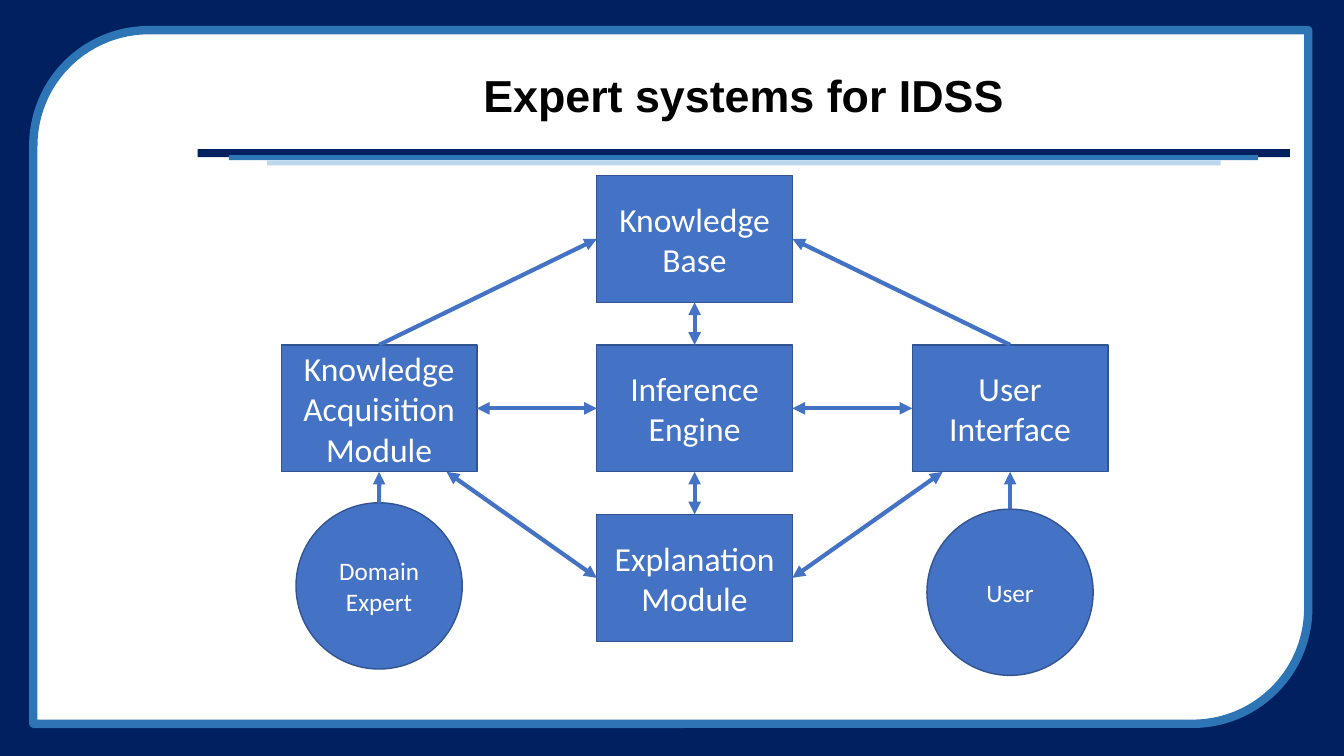
from lxml.etree import SubElement
from pptx import Presentation
from pptx.dml.color import RGBColor
from pptx.enum.shapes import MSO_CONNECTOR, MSO_SHAPE
from pptx.enum.text import MSO_ANCHOR, PP_ALIGN
from pptx.oxml.ns import qn
from pptx.util import Cm, Pt

TITLE = "Expert systems for IDSS"
NAVY, BLUE, PALE, WHITE, BLACK = "002060", "2E75B6", "BDD7EE", "FFFFFF", "000000"
NODE_FILL, NODE_LINE = "4472C4", "325491"
TOP, LEFT, BOTTOM, RIGHT = range(4)

RULES = [
    (4.98, 3.76, 27.53, 0.2, NAVY),
    (5.77, 3.91, 25.93, 0.13, BLUE),
    (6.73, 4.04, 24.03, 0.13, PALE),
]
MODULES = {
    "inference": ("Inference\nEngine", 1, 1),
    "interface": ("User\nInterface", 2, 1),
    "acquisition": ("Knowledge\nAcquisition\nModule", 0, 1),
    "explanation": ("Explanation\nModule", 1, 2),
    "knowledge": ("Knowledge\nBase", 1, 0),
}
PEOPLE = {
    "expert": ("Domain\nExpert", 0, 12.67),
    "user": ("User", 2, 12.83),
}
LINKS = [
    ("knowledge", BOTTOM, "inference", TOP, True),
    ("inference", RIGHT, "interface", LEFT, True),
    ("acquisition", RIGHT, "inference", LEFT, True),
    ("inference", BOTTOM, "explanation", TOP, True),
    ("acquisition", TOP, "knowledge", LEFT, False),
    ("interface", TOP, "knowledge", RIGHT, False),
    ("expert", TOP, "acquisition", BOTTOM, False),
    ("user", TOP, "interface", BOTTOM, False),
]
EXPLANATION_LINKS = [("acquisition", 1.7, LEFT), ("interface", -1.7, RIGHT)]

GRID_LEFT, GRID_TOP = 7.09, 4.42
COLUMN_STEP, ROW_STEP = 7.95, 4.27
BOX_WIDTH, BOX_HEIGHT, CIRCLE = 4.93, 3.2, 4.19


def color(value):
    return RGBColor.from_string(value)


def add_block(slide, kind, left, top, width, height, fill, line=None, weight=1):
    shape = slide.shapes.add_shape(kind, Cm(left), Cm(top), Cm(width), Cm(height))
    shape.shadow.inherit = False
    shape.fill.solid()
    shape.fill.fore_color.rgb = color(fill)
    if line:
        shape.line.color.rgb = color(line)
        shape.line.width = Pt(weight)
    else:
        shape.line.fill.background()
    return shape


def write(shape, text, size, font_name, font_color, bold=False):
    frame = shape.text_frame
    frame.text = text
    frame.word_wrap = True
    frame.vertical_anchor = MSO_ANCHOR.MIDDLE
    for paragraph in frame.paragraphs:
        paragraph.alignment = PP_ALIGN.CENTER
        for run in paragraph.runs:
            run.font.size = Pt(size)
            run.font.name = font_name
            run.font.bold = bold
            run.font.color.rgb = color(font_color)


def add_arrow(slide, both_ways, start=(0, 0)):
    connector = slide.shapes.add_connector(MSO_CONNECTOR.STRAIGHT, *start, 0, 0)
    connector.line.color.rgb = color(NODE_FILL)
    connector.line.width = Pt(3)
    line = connector.line._get_or_add_ln()
    for end in ("a:headEnd", "a:tailEnd") if both_ways else ("a:tailEnd",):
        SubElement(line, qn(end), type="triangle")
    SubElement(connector._element.spPr, qn("a:effectLst"))
    return connector


def add_frame(slide):
    add_block(slide, MSO_SHAPE.RECTANGLE, 0, 0, 33.87, 19.05, NAVY)
    add_block(slide, MSO_SHAPE.ROUND_2_DIAG_RECTANGLE, 0.84, 0.76, 32.13, 17.48, WHITE, BLUE, 6)
    for left, top, width, height, fill in RULES:
        add_block(slide, MSO_SHAPE.RECTANGLE, left, top, width, height, fill)


def add_title(slide):
    title = slide.shapes.title
    title.left, title.top, title.width, title.height = Cm(4.98), Cm(1.24), Cm(27.53), Cm(2.46)
    write(title, TITLE, 32, "Arial", BLACK, True)
    title.text_frame.paragraphs[0].line_spacing = 0.9
    slide.shapes._spTree.append(title._element)


def add_nodes(slide):
    nodes = {}
    for name, (text, column, row) in MODULES.items():
        nodes[name] = add_block(
            slide, MSO_SHAPE.RECTANGLE,
            GRID_LEFT + column * COLUMN_STEP, GRID_TOP + row * ROW_STEP,
            BOX_WIDTH, BOX_HEIGHT, NODE_FILL, NODE_LINE)
        write(nodes[name], text, 24, "Calibri", WHITE)
    for name, (text, column, top) in PEOPLE.items():
        left = GRID_LEFT + column * COLUMN_STEP + (BOX_WIDTH - CIRCLE) / 2
        nodes[name] = add_block(
            slide, MSO_SHAPE.OVAL, left, top, CIRCLE, CIRCLE, NODE_FILL, NODE_LINE)
        write(nodes[name], text, 18, "Calibri", WHITE)
    return nodes


def add_links(slide, nodes):
    for source, source_side, target, target_side, both_ways in LINKS:
        connector = add_arrow(slide, both_ways)
        connector.begin_connect(nodes[source], source_side)
        connector.end_connect(nodes[target], target_side)
    for source, offset, side in EXPLANATION_LINKS:
        box = nodes[source]
        start = (box.left + box.width // 2 + Cm(offset), box.top + box.height)
        add_arrow(slide, True, start).end_connect(nodes["explanation"], side)


def main():
    presentation = Presentation()
    presentation.slide_width, presentation.slide_height = Cm(33.87), Cm(19.05)
    slide = presentation.slides.add_slide(presentation.slide_layouts[5])
    add_frame(slide)
    add_title(slide)
    add_links(slide, add_nodes(slide))
    presentation.save("out.pptx")


if __name__ == "__main__":
    main()
